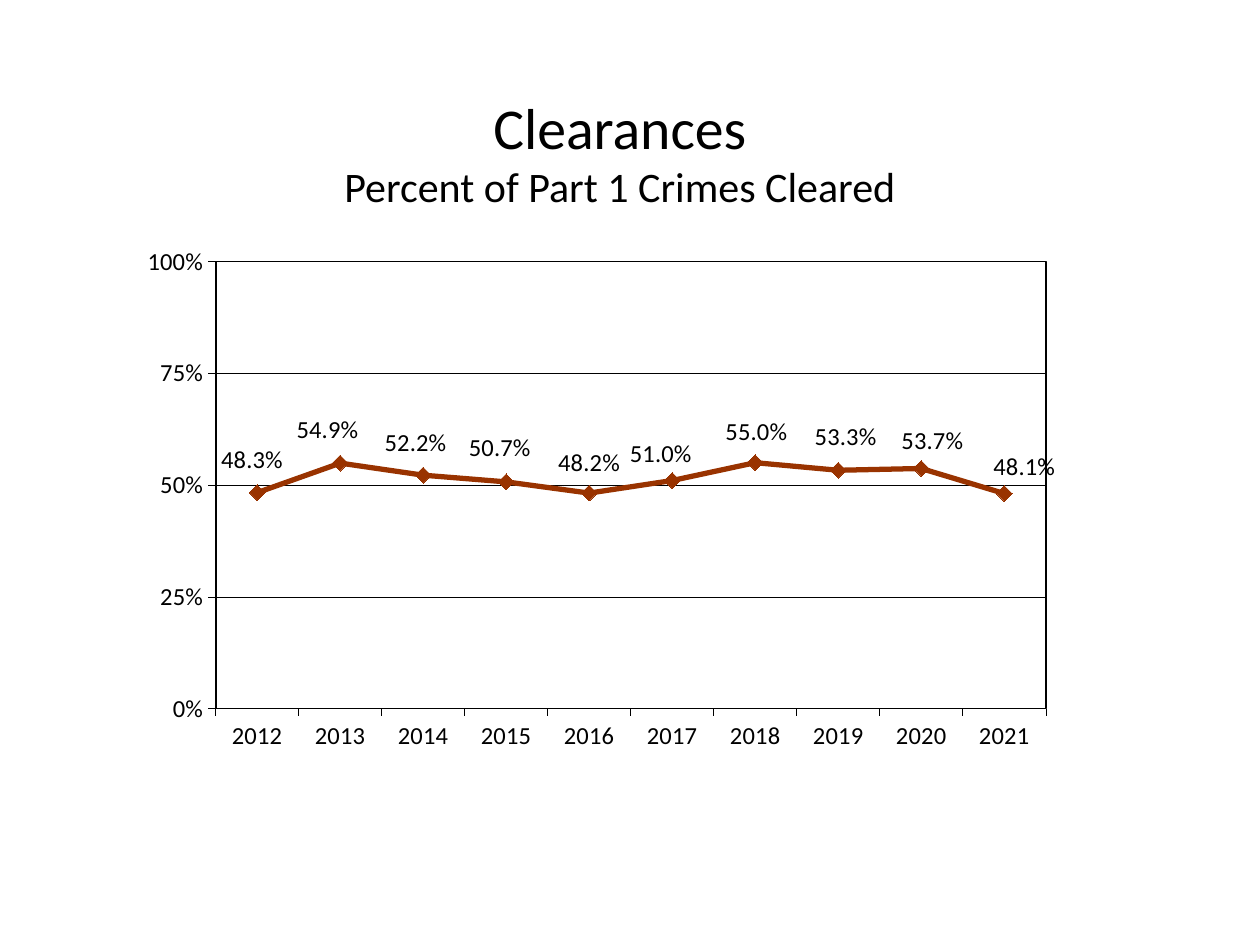
from lxml.etree import SubElement
from pptx import Presentation
from pptx.chart.data import CategoryChartData
from pptx.dml.color import RGBColor
from pptx.enum.chart import XL_CHART_TYPE, XL_LABEL_POSITION, XL_MARKER_STYLE, XL_TICK_MARK
from pptx.enum.text import MSO_ANCHOR, PP_ALIGN
from pptx.oxml import parse_xml
from pptx.oxml.ns import nsdecls, qn
from pptx.util import Inches, Pt

BLACK = RGBColor(0x00, 0x00, 0x00)
RUST = RGBColor(0x99, 0x33, 0x00)
FONT = "Calibri"

# Year, share cleared, and label shift (right, down) in inches
CLEARANCES = [
    (2012, 0.483, (-0.04, -0.04)),
    (2013, 0.549, (-0.10, -0.04)),
    (2014, 0.522, (-0.06, -0.03)),
    (2015, 0.507, (-0.05, -0.05)),
    (2016, 0.482, (0, -0.02)),
    (2017, 0.510, (-0.09, 0.01)),
    (2018, 0.550, (0.01, -0.02)),
    (2019, 0.533, (0.06, -0.04)),
    (2020, 0.537, (0.09, 0)),
    (2021, 0.481, (0.16, 0.01)),
]


def style_font(font, size):
    for name, value in {"name": FONT, "size": Pt(size)}.items():
        setattr(font, name, value)
    font.color.rgb = BLACK


def style_line(line, color, width):
    line.color.rgb = color
    line.width = Pt(width)


def manual_layout(**values):
    layout = parse_xml(f"<c:layout {nsdecls('c')}/>")
    manual = SubElement(layout, qn("c:manualLayout"))
    for tag, value in values.items():
        SubElement(manual, qn(f"c:{tag}")).set("val", str(value))
    return layout


def add_title(slide, left, top, width, height):
    tf = slide.shapes.add_textbox(left, top, width, height).text_frame
    tf.word_wrap = True
    tf.vertical_anchor = MSO_ANCHOR.MIDDLE
    p = tf.paragraphs[0]
    p.alignment = PP_ALIGN.CENTER
    r = p.add_run()
    r.text = "Clearances"
    style_font(r.font, 33)
    p.add_line_break()
    r = p.add_run()
    r.text = "Percent of Part 1 Crimes Cleared"
    style_font(r.font, 24)


def style_axes(chart):
    for axis in (chart.category_axis, chart.value_axis):
        axis.major_tick_mark = XL_TICK_MARK.OUTSIDE
        axis.minor_tick_mark = XL_TICK_MARK.NONE
        style_line(axis.format.line, BLACK, 0.25)
        style_font(axis.tick_labels.font, 14)
    axis = chart.value_axis
    settings = {"minimum_scale": 0, "maximum_scale": 1, "major_unit": 0.25,
                "has_major_gridlines": True}
    for name, value in settings.items():
        setattr(axis, name, value)
    style_line(axis.major_gridlines.format.line, BLACK, 0.25)
    axis.tick_labels.number_format = "0%"
    axis.tick_labels.number_format_is_linked = False


def frame_plot(chart):
    """Fix the inner plot area and outline it."""
    area = chart._chartSpace.chart.plotArea
    for old in area.findall(qn("c:layout")):
        area.remove(old)
    area.insert(0, manual_layout(layoutTarget="inner", xMode="edge", yMode="edge",
                                 x=0.115, y=0.071, w=0.859, h=0.773))
    area.append(parse_xml(
        f'<c:spPr {nsdecls("c", "a")}><a:noFill/><a:ln w="{Pt(1)}"><a:solidFill>'
        f'<a:srgbClr val="{BLACK}"/></a:solidFill></a:ln></c:spPr>'))


def label_points(series, width, height):
    labels = series.data_labels
    settings = {"show_value": True, "number_format": "0.0%",
                "number_format_is_linked": False, "position": XL_LABEL_POSITION.ABOVE}
    for name, value in settings.items():
        setattr(labels, name, value)
    style_font(labels.font, 14)
    for i, (_, _, (dx, dy)) in enumerate(CLEARANCES):
        label = series.points[i].data_label
        style_font(label.font, 14)
        label.position = XL_LABEL_POSITION.ABOVE
        shift = manual_layout(x=Inches(dx) / width, y=Inches(dy) / height)
        series._element.findall(f".//{qn('c:dLbl')}")[i].insert(1, shift)


def add_clearance_chart(slide, left, top, width, height):
    data = CategoryChartData(number_format="0.0%")
    data.categories = [str(year) for year, _, _ in CLEARANCES]
    data.add_series("Series 1", [share for _, share, _ in CLEARANCES])
    chart = slide.shapes.add_chart(XL_CHART_TYPE.LINE_MARKERS, left, top,
                                   width, height, data).chart
    chart.has_legend = False
    chart.has_title = False
    style_font(chart.font, 14)
    style_axes(chart)
    frame_plot(chart)

    plot = chart.plots[0]
    plot.vary_by_categories = False
    series = plot.series[0]
    series.smooth = False
    style_line(series.format.line, RUST, 3)
    marker = series.marker
    marker.style = XL_MARKER_STYLE.DIAMOND
    marker.size = 9
    marker.format.fill.solid()
    marker.format.fill.fore_color.rgb = RUST
    style_line(marker.format.line, RUST, 0.75)
    label_points(series, width, height)


def main():
    prs = Presentation()
    prs.slide_width, prs.slide_height = Inches(10), Inches(7.5)
    slide = prs.slides.add_slide(prs.slide_layouts[6])
    add_clearance_chart(slide, Inches(0.83), Inches(1.75), Inches(7.67), Inches(4.59))
    add_title(slide, Inches(2.42), Inches(0.65), Inches(5), Inches(1.1))
    prs.save("out.pptx")


if __name__ == "__main__":
    main()
